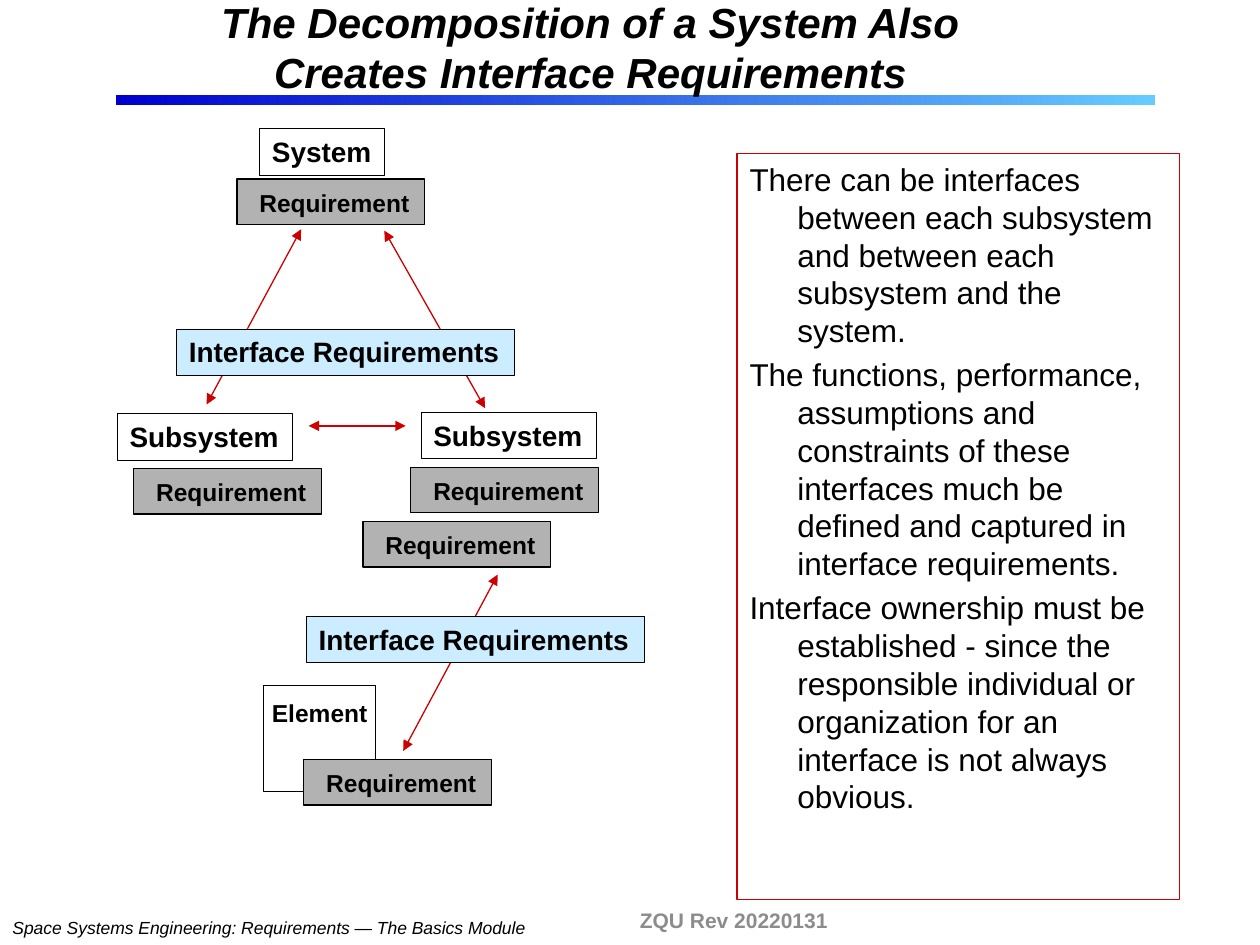
import pptx
import pptx.util
from lxml import etree
from pptx.dml.color import RGBColor
from pptx.enum.shapes import MSO_CONNECTOR, MSO_SHAPE
from pptx.enum.text import MSO_ANCHOR, MSO_AUTO_SIZE, PP_ALIGN
from pptx.oxml.ns import qn
from pptx.util import Inches

COLORS = {
    "black": "000000", "gray": "B2B2B2", "pale": "CCECFF", "red": "CC0000",
    "blue": "0000CC", "sky": "66CCFF", "note": "8C8C8C",
}
TITLE = "The Decomposition of a System Also Creates Interface Requirements"
FOOTER = "Space Systems Engineering: Requirements — The Basics Module"
REVISION = "ZQU Rev 20220131"
POINTS = [
    "There can be interfaces between each subsystem and between each subsystem and the system.",
    "The functions, performance, assumptions and constraints of these interfaces much be "
    "defined and captured in interface requirements.",
    "Interface ownership must be established - since the responsible individual or "
    "organization for an interface is not always obvious.",
]


def rgb(name):
    return RGBColor.from_string(COLORS[name])


def inches(box):
    return [Inches(v) for v in box]


def write(tf, text, size=14, color="black", bold=False, italic=False,
          align=PP_ALIGN.LEFT, anchor=MSO_ANCHOR.TOP, wrap=True, grow=False,
          before=0, hanging=0):
    """Fill a text frame; a list of strings gives one paragraph each."""
    tf.word_wrap = wrap
    tf.auto_size = MSO_AUTO_SIZE.SHAPE_TO_FIT_TEXT if grow else MSO_AUTO_SIZE.NONE
    tf.vertical_anchor = anchor
    for i, line in enumerate([text] if isinstance(text, str) else text):
        p = tf.add_paragraph() if i else tf.paragraphs[0]
        p.alignment = align
        p.space_before = pptx.util.Pt(before)
        if hanging:
            pPr = p._p.get_or_add_pPr()
            pPr.set("marL", str(Inches(hanging)))
            pPr.set("indent", str(-Inches(hanging)))
        r = p.add_run()
        r.text = line
        r.font.name = "Arial"
        r.font.size = pptx.util.Pt(size)
        r.font.bold = bold
        r.font.italic = italic
        r.font.color.rgb = rgb(color)


def add_rect(shapes, box, fill=None, line=None, width=0.75):
    sp = shapes.add_shape(MSO_SHAPE.RECTANGLE, *inches(box))
    sp.shadow.inherit = False
    if fill:
        sp.fill.solid()
        sp.fill.fore_color.rgb = rgb(fill)
    else:
        sp.fill.background()
    if line:
        sp.line.color.rgb = rgb(line)
        sp.line.width = pptx.util.Pt(width)
    else:
        sp.line.fill.background()
    return sp


def add_text(shapes, box, text, **fmt):
    write(shapes.add_textbox(*inches(box)).text_frame, text, **fmt)


def add_label(s, box, text, fill=None):
    sp = add_rect(s.shapes, box, fill, "black", 0.25)
    write(sp.text_frame, text, size=16, bold=True, wrap=False, grow=True)


def add_requirement(s, left, top):
    shapes = s.shapes.add_group_shape().shapes
    add_rect(shapes, (left, top, 1.49, 0.36), "gray", "black")
    sp = add_rect(shapes, (left + 0.08, top + 0.02, 1.39, 0.33), "gray")
    write(sp.text_frame, "Requirement", bold=True, wrap=False, grow=True)


def add_element(s, left, top):
    shapes = s.shapes.add_group_shape().shapes
    add_rect(shapes, (left, top, 0.89, 0.84), line="black")
    add_text(shapes, (left - 0.03, top + 0.05, 0.96, 0.33), "Element",
             bold=True, wrap=False, grow=True)


def add_arrow(s, x1, y1, x2, y2):
    c = s.shapes.add_connector(MSO_CONNECTOR.STRAIGHT, *inches((x1, y1, x2, y2)))
    c.line.color.rgb = rgb("red")
    c.line.width = pptx.util.Pt(0.75)
    spPr = c.element.spPr
    for end in ("a:headEnd", "a:tailEnd"):
        etree.SubElement(spPr.find(qn("a:ln")), qn(end)).set("type", "triangle")
    etree.SubElement(spPr, qn("a:effectLst"))


def add_heading(s, box):
    left, top = box[:2]
    # Gradient rule, with the title in front of it
    bar = add_rect(s.shapes, (left - 0.33, top + 0.63, 8.25, 0.08))
    bar.fill.gradient()
    bar.fill.gradient_angle = 0
    for stop, name in zip(bar.fill.gradient_stops, ("blue", "sky")):
        stop.color.rgb = rgb(name)
    title = s.shapes.title
    title.left, title.top, title.width, title.height = inches(box)
    write(title.text_frame, TITLE, size=24, bold=True, italic=True,
          align=PP_ALIGN.CENTER, anchor=MSO_ANCHOR.MIDDLE)
    title.element.getparent().append(title.element)


def add_points(s, box):
    sp = add_rect(s.shapes, box, line="red")
    write(sp.text_frame, POINTS, size=18, before=3.6, hanging=0.38)


def add_diagram(s, box):
    x, y = box[:2]
    # Requirements and element
    add_requirement(s, x + 0.95, y + 0.4)
    add_element(s, x + 1.16, y + 4.42)
    for dx, dy in ((2.33, 2.69), (1.95, 3.12), (0.13, 2.7), (1.48, 5.01)):
        add_requirement(s, x + dx, y + dy)
    # System and subsystems
    add_label(s, (x + 2.41, y + 2.25, 1.39, 0.37), "Subsystem")
    add_label(s, (x, y + 2.26, 1.39, 0.37), "Subsystem")
    add_label(s, (x + 1.13, y, 0.99, 0.37), "System")
    # Arrows, partly covered by the interface labels
    for x1, y1, x2, y2 in ((1.52, 2.36, 2.29, 2.36), (0.71, 2.19, 1.46, 0.8),
                           (2.12, 0.81, 2.92, 2.22), (2.27, 4.94, 3.02, 3.54)):
        add_arrow(s, x + x1, y + y1, x + x2, y + y2)
    for dx, dy in ((1.5, 3.87), (0.47, 1.59)):
        add_label(s, (x + dx, y + dy, 2.68, 0.37), "Interface Requirements", "pale")


def add_footer(s, box):
    left, top = box[:2]
    add_text(s.shapes, (left, top + 0.13, 4.28, 0.27), FOOTER,
             size=10, italic=True, wrap=False, grow=True)
    add_text(s.shapes, (left + 4.98, top, 2.25, 0.4), REVISION,
             size=12, color="note", bold=True, anchor=MSO_ANCHOR.MIDDLE)


def main():
    prs = pptx.Presentation()
    prs.slide_width, prs.slide_height = Inches(10), Inches(7.5)
    s = prs.slides.add_slide(prs.slide_layouts[5])
    add_heading(s, (1.25, 0.12, 6.87, 0.5))
    add_points(s, (5.85, 1.22, 3.51, 5.92))
    add_diagram(s, (0.93, 1.02, 4.18, 5.37))
    add_footer(s, (0, 7.1, 10, 0.4))
    prs.save("out.pptx")


if __name__ == "__main__":
    main()
